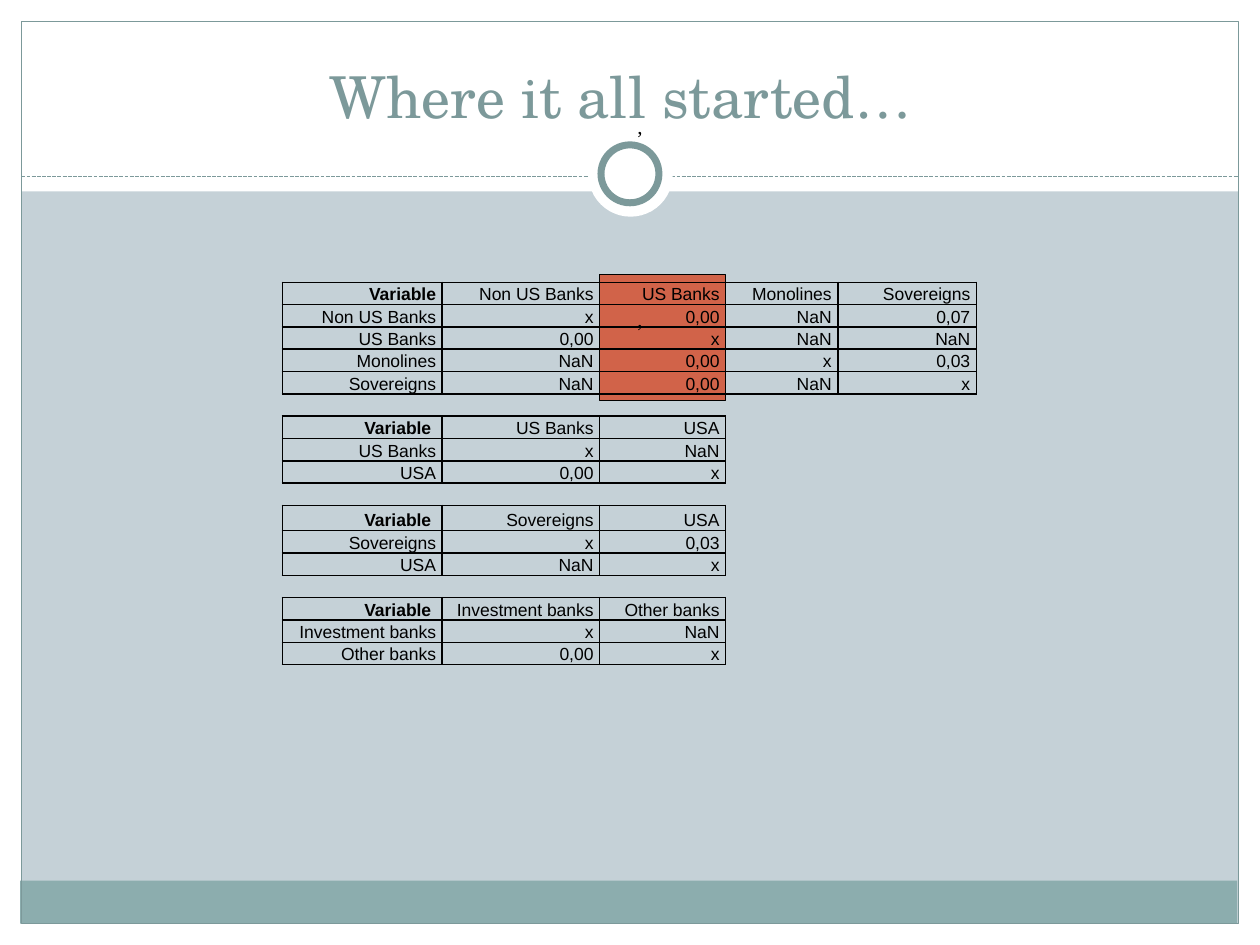
from typing import NamedTuple, Optional

from lxml import etree
from pptx import Presentation
from pptx.dml.color import RGBColor
from pptx.enum import dml, shapes, text
from pptx.oxml.ns import qn
from pptx.util import Inches, Pt

COLORS = {
    "background": "C5D1D7",
    "white": "FFFFFF",
    "footer": "8CADAE",
    "accent": "7C999A",
    "highlight": "D16349",
    "black": "000000",
}
RECT, OVAL = shapes.MSO_SHAPE.RECTANGLE, shapes.MSO_SHAPE.OVAL


class Panel(NamedTuple):
    left: float
    top: float
    width: float
    height: float
    fill: Optional[str] = None
    line: Optional[str] = None
    weight: float = 0.75
    kind: shapes.MSO_SHAPE = RECT


class Label(NamedTuple):
    words: str
    left: float
    top: float
    width: float
    height: float
    font: str
    size: float
    color: str
    anchor: text.MSO_ANCHOR
    wrap: bool = True
    indent: float = 0


FRAME = [
    Panel(0, 7.33, 10, 0.17, "white"),
    Panel(0, 0, 10, 1.52, "white"),
    Panel(0, 0, 0.17, 7.5, "white"),
    Panel(9.83, 0, 0.17, 7.5, "white"),
    Panel(0.16, 6.99, 9.66, 0.34, "footer"),
    Panel(0.17, 0.17, 9.66, 7.16, line="accent"),
]
EMBLEM = [
    Panel(4.67, 1.05, 0.67, 0.67, "white", kind=OVAL),
    Panel(4.77, 1.15, 0.46, 0.46, "white", "accent", 4, OVAL),
]
HIGHLIGHT = Panel(4.76, 2.18, 1, 1, "highlight", "black")

LABELS = [
    Label("Where it all started… ", 0.33, 0.25, 9.33, 0.83, "TeX Gyre Schola", 33,
          "accent", text.MSO_ANCHOR.BOTTOM),
    *(Label(", ", 0, top, 10, 0, "Times New Roman", 12, "black",
            text.MSO_ANCHOR.MIDDLE, wrap=False, indent=0.2) for top in (1, 2.53)),
]

# Each block is one matrix; an empty row separates the blocks
BLOCKS = [
    [["Variable", "Non US Banks", "US Banks", "Monolines", "Sovereigns"],
     ["Non US Banks", "x", "0,00", "NaN", "0,07"],
     ["US Banks", "0,00", "x", "NaN", "NaN"],
     ["Monolines", "NaN", "0,00", "x", "0,03"],
     ["Sovereigns", "NaN", "0,00", "NaN", "x"]],
    [["Variable ", "US Banks", "USA"],
     ["US Banks", "x", "NaN"],
     ["USA", "0,00", "x"]],
    [["Variable ", "Sovereigns", "USA"],
     ["Sovereigns", "x", "0,03"],
     ["USA", "NaN", "x"]],
    [["Variable ", "Investment banks", "Other banks"],
     ["Investment banks", "x", "NaN"],
     ["Other banks", "0,00", "x"]],
]
COLUMN_WIDTHS = [1.27, 1.25, 1, 0.89, 1.1]
TABLE_LEFT, TABLE_TOP, TABLE_HEIGHT = 2.24, 2.24, 3.04
TALL_ROW, TALL_HEIGHT = 10, 0.2


def rgb(name: str) -> RGBColor:
    return RGBColor.from_string(COLORS[name])


def draw_panel(slide, panel: Panel) -> None:
    shape = slide.shapes.add_shape(panel.kind, *map(Inches, panel[:4]))
    shape.shadow.inherit = False
    if panel.fill:
        shape.fill.solid()
        shape.fill.fore_color.rgb = rgb(panel.fill)
    else:
        shape.fill.background()
    if panel.line:
        shape.line.color.rgb = rgb(panel.line)
        shape.line.width = Pt(panel.weight)
    else:
        shape.line.fill.background()


def draw_divider(slide) -> None:
    divider = slide.shapes.add_connector(
        shapes.MSO_CONNECTOR.STRAIGHT, *map(Inches, (0.17, 1.4, 9.83, 1.4)))
    divider.line.color.rgb = rgb("accent")
    divider.line.width = Pt(0.75)
    divider.line.dash_style = dml.MSO_LINE.SQUARE_DOT
    properties = divider.element.find(qn("p:spPr"))
    properties.find(qn("a:ln")).find(qn("a:prstDash")).set("val", "sysDash")
    etree.SubElement(properties, qn("a:effectLst"))


def style(paragraph, font: str, size: float, color: str, bold: bool = False) -> None:
    paragraph.font.name = font
    paragraph.font.size = Pt(size)
    paragraph.font.bold = bold
    paragraph.font.color.rgb = rgb(color)


def draw_label(slide, label: Label) -> None:
    box = slide.shapes.add_textbox(*map(Inches, label[1:5]))
    frame = box.text_frame
    frame.word_wrap = label.wrap
    frame.vertical_anchor = label.anchor
    if not label.wrap:
        frame.auto_size = text.MSO_AUTO_SIZE.SHAPE_TO_FIT_TEXT
    paragraph = frame.paragraphs[0]
    paragraph.text = label.words
    paragraph.alignment = text.PP_ALIGN.CENTER
    if label.indent:
        paragraph._p.get_or_add_pPr().set("indent", str(Inches(label.indent)))
    style(paragraph, label.font, label.size, label.color)


def set_borders(cell, sides: dict[str, bool]) -> None:
    """Add the four edges ahead of the cell's fill."""
    properties = cell._tc.get_or_add_tcPr()
    for position, (side, visible) in enumerate(sides.items()):
        edge = etree.Element(qn(f"a:ln{side}"), w=str(Pt(1)))
        if visible:
            fill = etree.SubElement(edge, qn("a:solidFill"))
            etree.SubElement(fill, qn("a:srgbClr"), val=COLORS["black"])
        else:
            etree.SubElement(edge, qn("a:noFill"))
        properties.insert(position, edge)


def draw_matrices(slide) -> None:
    rows = list(BLOCKS[0])
    for block in BLOCKS[1:]:
        rows += [[], *block]
    table = slide.shapes.add_table(
        len(rows), len(COLUMN_WIDTHS), Inches(TABLE_LEFT), Inches(TABLE_TOP),
        Inches(sum(COLUMN_WIDTHS)), Inches(TABLE_HEIGHT)).table
    table.first_row = table.horz_banding = False
    for column, width in zip(table.columns, COLUMN_WIDTHS):
        column.width = Inches(width)
    row_height = (TABLE_HEIGHT - TALL_HEIGHT) / (len(rows) - 1)

    def filled(r: int, c: int) -> bool:
        return 0 <= r < len(rows) and 0 <= c < len(rows[r])

    for r, words in enumerate(rows):
        table.rows[r].height = Inches(TALL_HEIGHT if r == TALL_ROW else row_height)
        for c in range(len(COLUMN_WIDTHS)):
            cell = table.cell(r, c)
            cell.fill.background()
            cell.margin_left = cell.margin_right = Inches(0.05)
            cell.margin_top = cell.margin_bottom = 0
            cell.vertical_anchor = text.MSO_ANCHOR.BOTTOM
            neighbours = {"L": (r, c - 1), "R": (r, c + 1),
                          "T": (r - 1, c), "B": (r + 1, c)}
            set_borders(cell, {side: filled(r, c) or filled(*place)
                               for side, place in neighbours.items()})
            paragraph = cell.text_frame.paragraphs[0]
            if filled(r, c):
                paragraph.text = words[c]
                paragraph.alignment = text.PP_ALIGN.RIGHT
                style(paragraph, "Arial", 10, "black", words[c].startswith("Variable"))
            else:
                # Small end mark keeps empty rows from growing
                etree.SubElement(paragraph._p, qn("a:endParaRPr"), sz="1000")


def main() -> None:
    deck = Presentation()
    deck.slide_width, deck.slide_height = Inches(10), Inches(7.5)
    slide = deck.slides.add_slide(deck.slide_layouts[6])
    slide.background.fill.solid()
    slide.background.fill.fore_color.rgb = rgb("background")

    # Frame, divider and emblem
    for panel in FRAME:
        draw_panel(slide, panel)
    draw_divider(slide)
    for panel in [*EMBLEM, HIGHLIGHT]:
        draw_panel(slide, panel)

    # Title and stray marks, then the matrices
    for label in LABELS:
        draw_label(slide, label)
    draw_matrices(slide)
    deck.save("out.pptx")


if __name__ == "__main__":
    main()
